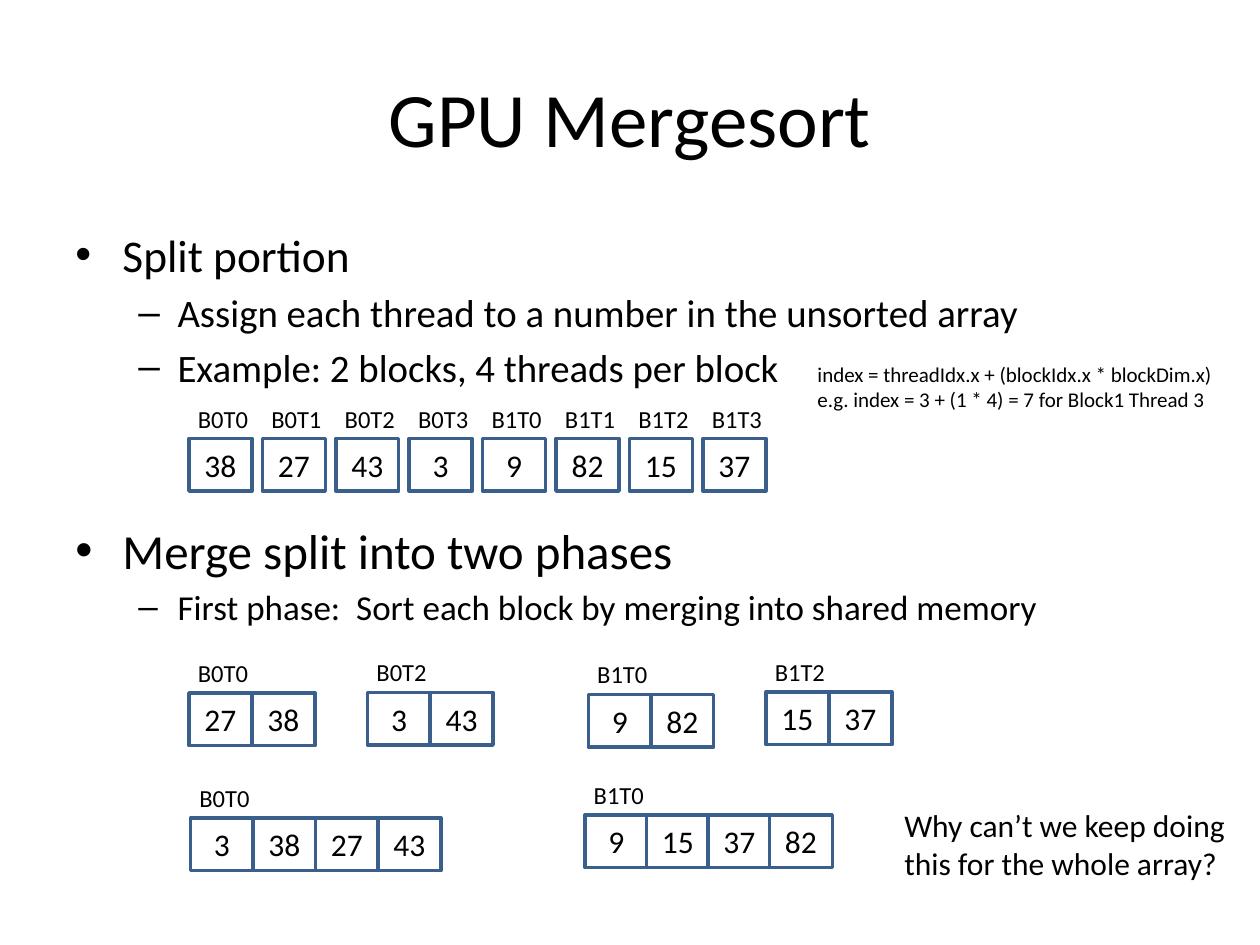
from lxml.etree import SubElement
from pptx import Presentation
from pptx.dml.color import RGBColor
from pptx.enum.shapes import MSO_SHAPE
from pptx.enum.text import MSO_ANCHOR, MSO_AUTO_SIZE, PP_ALIGN
from pptx.oxml.ns import qn
from pptx.util import Cm, Pt

COLORS = {"ink": "000000", "paper": "FFFFFF", "edge": "3A5F8C"}
FONT = "Calibri"
TITLE = "GPU Mergesort"
SPLIT = [
    ("Split portion", 25.9, 0),
    ("Assign each thread to a number in the unsorted array", 22.2, 1),
    ("Example: 2 blocks, 4 threads per block", 22.2, 1),
]
MERGE = [
    ("Merge split into two phases", 28, 0),
    ("First phase:  Sort each block by merging into shared memory", 20, 1),
]
INDEX = [
    "index = threadIdx.x + (blockIdx.x * blockDim.x)",
    "e.g. index = 3 + (1 * 4) = 7 for Block1 Thread 3",
]
QUERY = ["Why can’t we keep doing", "this for the whole array?"]
THREADS = [f"B{block}T{thread}" for block in range(2) for thread in range(4)]
ARRAYS = [
    (3.81, 8.84, 1.48, THREADS, [38, 27, 43, 3, 9, 82, 15, 37]),
    (3.81, 13.97, 1.27, ["B0T0"], [27, 38]),
    (7.41, 13.96, 1.26, ["B0T2"], [3, 43]),
    (11.86, 14, 1.26, ["B1T0"], [9, 82]),
    (15.44, 13.95, 1.27, ["B1T2"], [15, 37]),
    (3.84, 16.49, 1.26, ["B0T0"], [3, 38, 27, 43]),
    (11.79, 16.43, 1.24, ["B1T0"], [9, 15, 37, 82]),
]
CELL = (1.27, 1.06)
LABEL = (1.55, 0.86)
SHIFT = (-0.07, -0.83)
LEVELS = [("•", 0.95, -0.95), ("–", 2.06, -0.79)]


def color(name):
    return RGBColor.from_string(COLORS[name])


def write(shape, text, size=18, align=PP_ALIGN.LEFT, anchor=MSO_ANCHOR.TOP,
          wrap=True, grow=False):
    frame = shape.text_frame
    frame.word_wrap = wrap
    frame.vertical_anchor = anchor
    frame.auto_size = MSO_AUTO_SIZE.SHAPE_TO_FIT_TEXT if grow else MSO_AUTO_SIZE.NONE
    lines = [text] if isinstance(text, str) else text
    for i, line in enumerate(lines):
        para = frame.paragraphs[0] if i == 0 else frame.add_paragraph()
        words, points, level = (line, size, None) if isinstance(line, str) else line
        para.alignment = align
        run = para.add_run()
        run.text = words
        run.font.name = FONT
        run.font.size = Pt(points)
        run.font.color.rgb = color("ink")
        if level is not None:
            mark, left, indent = LEVELS[level]
            para.level = level
            para.space_before = Pt(round(points * 0.2, 1))
            props = para._p.get_or_add_pPr()
            props.set("marL", str(Cm(left)))
            props.set("indent", str(Cm(indent)))
            SubElement(props, qn("a:buFont")).set("typeface", "Arial")
            SubElement(props, qn("a:buChar")).set("char", mark)


def add_text(slide, spot, text, **style):
    write(slide.shapes.add_textbox(*map(Cm, spot)), text, **style)


def add_cell(slide, left, top, value):
    cell = slide.shapes.add_shape(MSO_SHAPE.RECTANGLE, *map(Cm, (left, top, *CELL)))
    cell.shadow.inherit = False
    cell.fill.solid()
    cell.fill.fore_color.rgb = color("paper")
    cell.line.color.rgb = color("edge")
    cell.line.width = Pt(2)
    write(cell, str(value), align=PP_ALIGN.CENTER, anchor=MSO_ANCHOR.MIDDLE)


def add_array(slide, left, top, pitch, labels, values):
    for i, value in enumerate(values):
        add_cell(slide, left + i * pitch, top, value)
    for i, label in enumerate(labels):
        spot = (left + i * pitch + SHIFT[0], top + SHIFT[1], *LABEL)
        add_text(slide, spot, label, size=14, wrap=False, grow=True)


def main():
    deck = Presentation()
    deck.slide_width, deck.slide_height = Cm(25.4), Cm(19.05)
    slide = deck.slides.add_slide(deck.slide_layouts[6])
    add_text(slide, (1.27, 0.76, 22.86, 3.18), TITLE, size=44,
             align=PP_ALIGN.CENTER, anchor=MSO_ANCHOR.MIDDLE)
    add_text(slide, (1.27, 4.45, 22.86, 3.18), SPLIT)
    add_text(slide, (1.27, 10.36, 22.86, 3.18), MERGE)
    for array in ARRAYS:
        add_array(slide, *array)
    add_text(slide, (16.23, 7.16, 8.74, 1.27), INDEX, size=12, grow=True)
    add_text(slide, (17.98, 16.13, 7.06, 1.8), QUERY, wrap=False, grow=True)
    deck.save("out.pptx")


if __name__ == "__main__":
    main()
